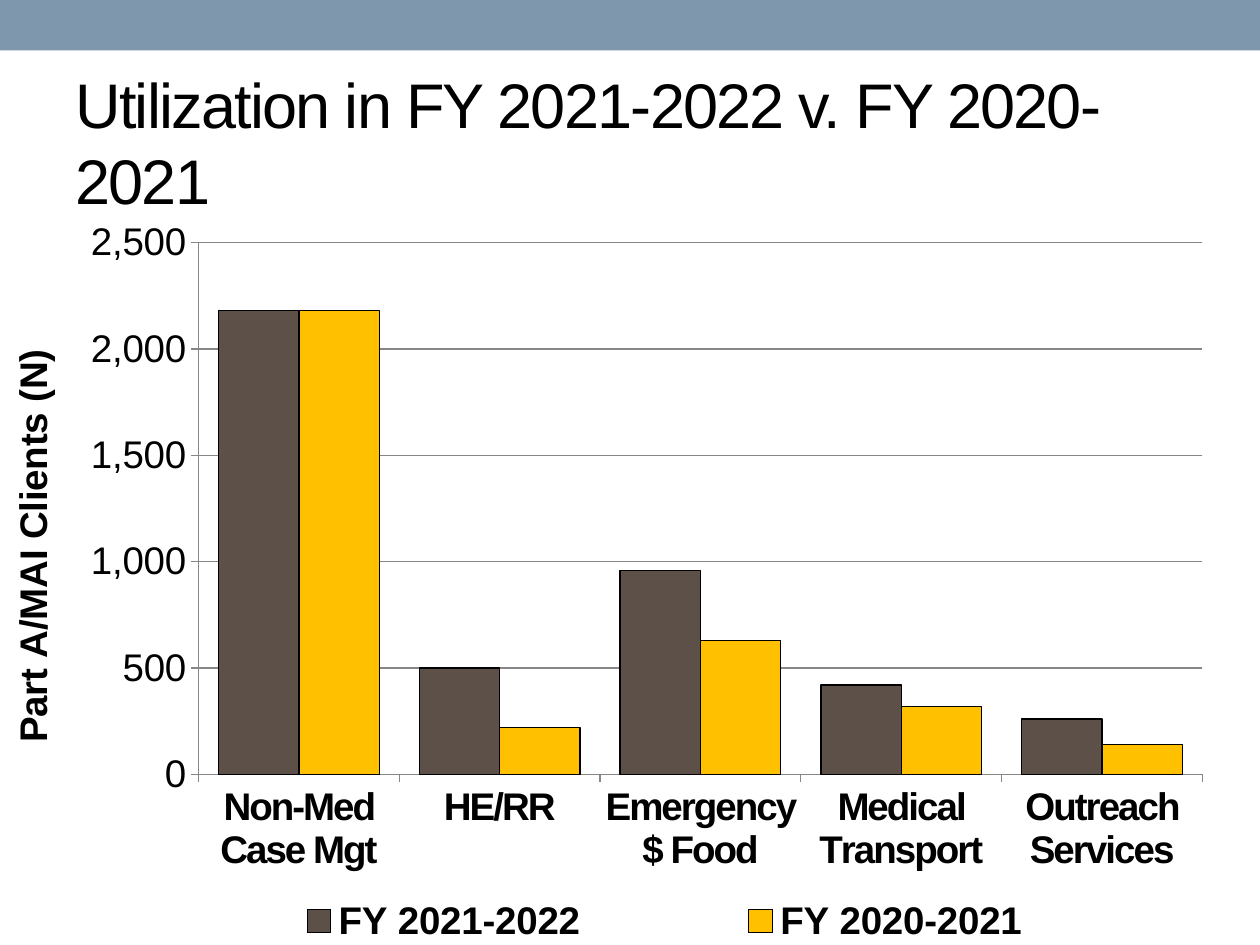
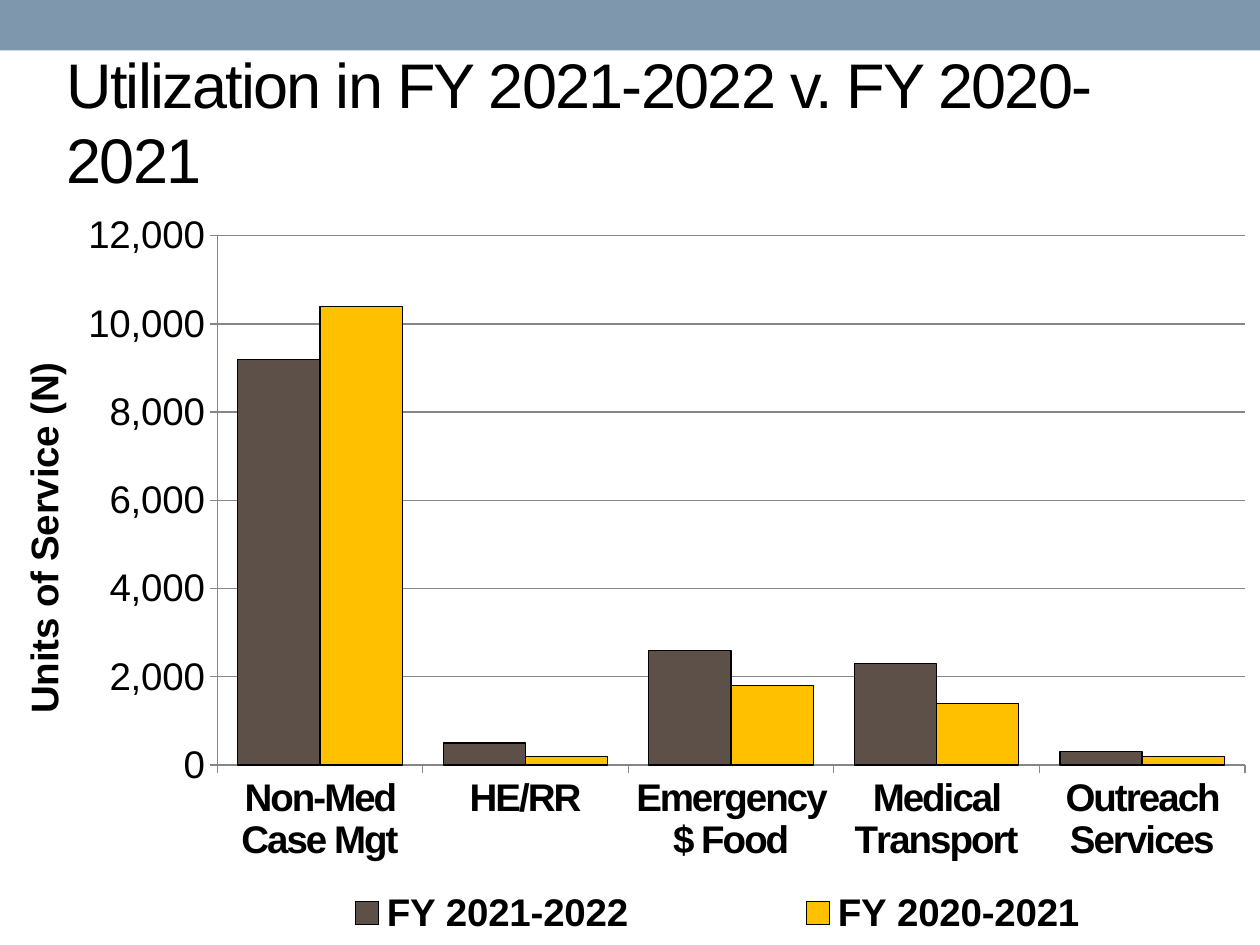
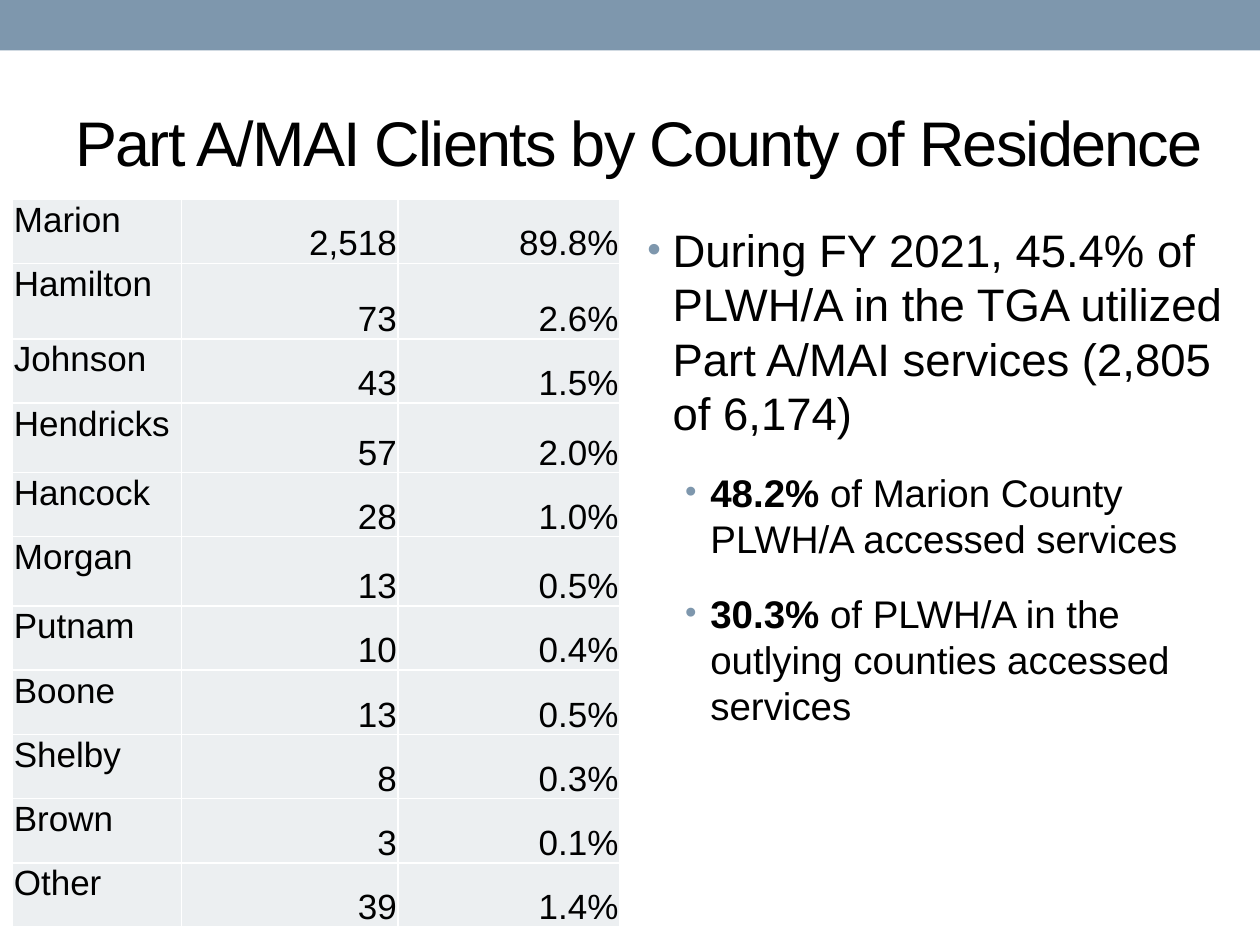
from lxml.etree import SubElement
from pptx import Presentation
from pptx.chart.data import CategoryChartData
from pptx.dml.color import RGBColor
from pptx.enum.chart import XL_CHART_TYPE, XL_LEGEND_POSITION, XL_TICK_MARK
from pptx.enum.shapes import MSO_SHAPE
from pptx.enum.text import MSO_ANCHOR, PP_ALIGN
from pptx.oxml.ns import qn
from pptx.util import Inches, Pt

BLACK = RGBColor(0x00, 0x00, 0x00)
WHITE = RGBColor(0xFF, 0xFF, 0xFF)
STEEL = RGBColor(0x7E, 0x97, 0xAD)
BROWN = RGBColor(0x5C, 0x50, 0x48)
GOLD = RGBColor(0xFF, 0xC0, 0x00)
GRAY = RGBColor(0x86, 0x86, 0x86)
PALE = RGBColor(0xEC, 0xEF, 0xF1)

FONT = "Arial"
COMPARISON = "Utilization in FY 2021-2022 v. FY 2020-2021"
SERVICES = ["Non-Med Case Mgt", "HE/RR", "Emergency $ Food",
            "Medical Transport", "Outreach Services"]
YEARS = [("FY 2021-2022", BROWN), ("FY 2020-2021", GOLD)]

UTILIZATION = [
    dict(title_box=(0.5, 0.58, 9, 1.08), chart_box=(-0.02, 1.68, 9.67, 6.12),
         measure="Part A/MAI Clients (N)", top=2500, step=500,
         plot=(0.165, 0.04, 0.824, 0.69), key=(0.126, 0.88, 0.843, 0.08),
         counts=[(2180, 500, 960, 420, 260), (2180, 220, 630, 320, 140)]),
    dict(title_box=(0.43, 0.42, 9, 1.08), chart_box=(0.1, 1.67, 9.9, 6.09),
         measure="Units of Service (N)", top=12000, step=2000,
         plot=(0.164, 0.033, 0.824, 0.69), key=(0.142, 0.876, 0.846, 0.08),
         counts=[(9200, 500, 2600, 2300, 300), (10400, 200, 1800, 1400, 200)]),
]

COUNTIES = [
    ("Marion", "2,518", "89.8%"),
    ("Hamilton", "73", "2.6%"),
    ("Johnson", "43", "1.5%"),
    ("Hendricks", "57", "2.0%"),
    ("Hancock", "28", "1.0%"),
    ("Morgan", "13", "0.5%"),
    ("Putnam", "10", "0.4%"),
    ("Boone", "13", "0.5%"),
    ("Shelby", "8", "0.3%"),
    ("Brown", "3", "0.1%"),
    ("Other", "39", "1.4%"),
]
COUNTY_WIDTHS = (1.34, 1.72, 1.76)
ROW_HEIGHT = 0.51
TALL_ROWS = {"Hamilton": 0.6, "Hendricks": 0.55, "Morgan": 0.55}

FINDINGS = [
    (0, "", "During FY 2021, 45.4% of PLWH/A in the TGA utilized "
            "Part A/MAI services (2,805 of 6,174)"),
    (1, "48.2%", " of Marion County PLWH/A accessed services"),
    (1, "30.3%", " of PLWH/A in the outlying counties accessed services"),
]
FINDING_LEVELS = [(26, 0.2), (22, 0.5)]


def apply(target, **formats):
    for name, value in formats.items():
        setattr(target, name, value)


def set_font(font, size, bold=False):
    apply(font, name=FONT, size=Pt(size), bold=bold)
    font.color.rgb = BLACK


def add_text_area(slide, box, **formats):
    frame = slide.shapes.add_textbox(*map(Inches, box)).text_frame
    apply(frame, word_wrap=True, **formats)
    return frame


def add_run(paragraph, words, size, bold=False):
    run = paragraph.add_run()
    run.text = words
    set_font(run.font, size, bold)
    return run


def add_titled_slide(deck, title, box):
    slide = deck.slides.add_slide(deck.slide_layouts[6])
    band = slide.shapes.add_shape(MSO_SHAPE.RECTANGLE, 0, 0,
                                  deck.slide_width, Inches(0.4))
    band.shadow.inherit = False
    band.fill.solid()
    band.fill.fore_color.rgb = STEEL
    band.line.fill.background()
    frame = add_text_area(slide, box, vertical_anchor=MSO_ANCHOR.MIDDLE)
    heading = add_run(frame.paragraphs[0], title, 36)
    heading.font._element.set("spc", "-100") if hasattr(heading.font, "_element") \
        else heading._r.get_or_add_rPr().set("spc", "-100")
    return slide


def set_layout(parent, position, fractions, inner=False):
    for old in parent.findall(qn("c:layout")):
        parent.remove(old)
    layout = parent.makeelement(qn("c:layout"))
    parent.insert(position, layout)
    manual = SubElement(layout, qn("c:manualLayout"))
    settings = {"layoutTarget": "inner"} if inner else {}
    settings.update(xMode="edge", yMode="edge")
    settings.update(zip("xywh", map(str, fractions)))
    for name, value in settings.items():
        SubElement(manual, qn(f"c:{name}"), val=value)


def add_utilization_chart(slide, box, measure, top, step, plot, key, counts):
    figures = CategoryChartData(number_format="#,##0")
    figures.categories = SERVICES
    for (year, _), values in zip(YEARS, counts):
        figures.add_series(year, values)
    chart = slide.shapes.add_chart(XL_CHART_TYPE.COLUMN_CLUSTERED,
                                   *map(Inches, box), figures).chart
    set_font(chart.font, 22)
    apply(chart, has_title=False, has_legend=True)
    apply(chart.legend, position=XL_LEGEND_POSITION.BOTTOM, include_in_layout=False)
    set_font(chart.legend.font, 22, True)

    columns = chart.plots[0]
    apply(columns, gap_width=50, overlap=0, vary_by_categories=False)
    for series, (_, color) in zip(columns.series, YEARS):
        series.format.fill.solid()
        series.format.fill.fore_color.rgb = color
        series.format.line.color.rgb = BLACK
        series.format.line.width = Pt(0.75)

    services, amounts = chart.category_axis, chart.value_axis
    for axis, bold in ((services, True), (amounts, False)):
        axis.major_tick_mark = XL_TICK_MARK.OUTSIDE
        axis.format.line.color.rgb = GRAY
        set_font(axis.tick_labels.font, 22, bold)
    apply(amounts, minimum_scale=0, maximum_scale=top, major_unit=step,
          has_major_gridlines=True, has_title=True)
    apply(amounts.tick_labels, number_format="#,##0", number_format_is_linked=False)
    amounts.major_gridlines.format.line.color.rgb = GRAY
    add_run(amounts.axis_title.text_frame.paragraphs[0], measure, 22, True)

    for label_style in chart.element.xpath(".//c:catAx/c:txPr//a:defRPr"):
        label_style.set("spc", "-100")
    set_layout(chart.element.xpath("c:chart/c:plotArea")[0], 0, plot, inner=True)
    set_layout(chart.element.xpath("c:chart/c:legend")[0], 1, key)


def add_cell_borders(cell):
    properties = cell._tc.get_or_add_tcPr()
    for position, side in enumerate(("lnL", "lnR", "lnT", "lnB")):
        border = properties.makeelement(qn(f"a:{side}"), w=str(Pt(1)))
        properties.insert(position, border)
        fill = SubElement(border, qn("a:solidFill"))
        SubElement(fill, qn("a:srgbClr"), val=str(WHITE))


def add_county_table(slide, box):
    table = slide.shapes.add_table(len(COUNTIES), len(COUNTY_WIDTHS),
                                   *map(Inches, box)).table
    apply(table, first_row=False, horz_banding=False)
    for column, width in zip(table.columns, COUNTY_WIDTHS):
        column.width = Inches(width)
    for row, county in zip(table.rows, COUNTIES):
        row.height = Inches(TALL_ROWS.get(county[0], ROW_HEIGHT))
        for index, (cell, words) in enumerate(zip(row.cells, county)):
            apply(cell, margin_left=Inches(0.01), margin_right=Inches(0.01),
                  margin_top=Inches(0.01), margin_bottom=0,
                  vertical_anchor=MSO_ANCHOR.BOTTOM if index else MSO_ANCHOR.TOP)
            cell.fill.solid()
            cell.fill.fore_color.rgb = PALE
            add_cell_borders(cell)
            paragraph = cell.text_frame.paragraphs[0]
            paragraph.alignment = PP_ALIGN.RIGHT if index else PP_ALIGN.LEFT
            add_run(paragraph, words, 20)


def add_bullet(paragraph, indent):
    properties = paragraph._p.get_or_add_pPr()
    properties.set("marL", str(Inches(indent)))
    properties.set("indent", str(Inches(-0.2)))
    color = SubElement(properties, qn("a:buClr"))
    SubElement(color, qn("a:srgbClr"), val=str(STEEL))
    SubElement(properties, qn("a:buSzPct"), val="85000")
    SubElement(properties, qn("a:buFont"), typeface=FONT)
    SubElement(properties, qn("a:buChar"), char="•")


def add_findings(slide, box):
    frame = add_text_area(slide, box)
    for index, (level, share, statement) in enumerate(FINDINGS):
        paragraph = frame.add_paragraph() if index else frame.paragraphs[0]
        size, indent = FINDING_LEVELS[level]
        apply(paragraph, level=level, space_before=Pt(size * 0.2), space_after=Pt(12))
        add_bullet(paragraph, indent)
        if share:
            add_run(paragraph, share, size, True)
        add_run(paragraph, statement, size)


def build_utilization_slide(deck, title_box, chart_box, **details):
    slide = add_titled_slide(deck, COMPARISON, title_box)
    add_utilization_chart(slide, chart_box, **details)


def build_county_slide(deck):
    slide = add_titled_slide(deck, "Part A/MAI Clients by County of Residence",
                             (0.5, 0.58, 9.25, 1.08))
    add_findings(slide, (5.04, 1.71, 5, 5.17))
    add_county_table(slide, (0.1, 1.58, 4.82, 5.75))


def main():
    deck = Presentation()
    apply(deck, slide_width=Inches(10), slide_height=Inches(7.5))
    for details in UTILIZATION:
        build_utilization_slide(deck, **details)
    build_county_slide(deck)
    deck.save("out.pptx")


if __name__ == "__main__":
    main()
